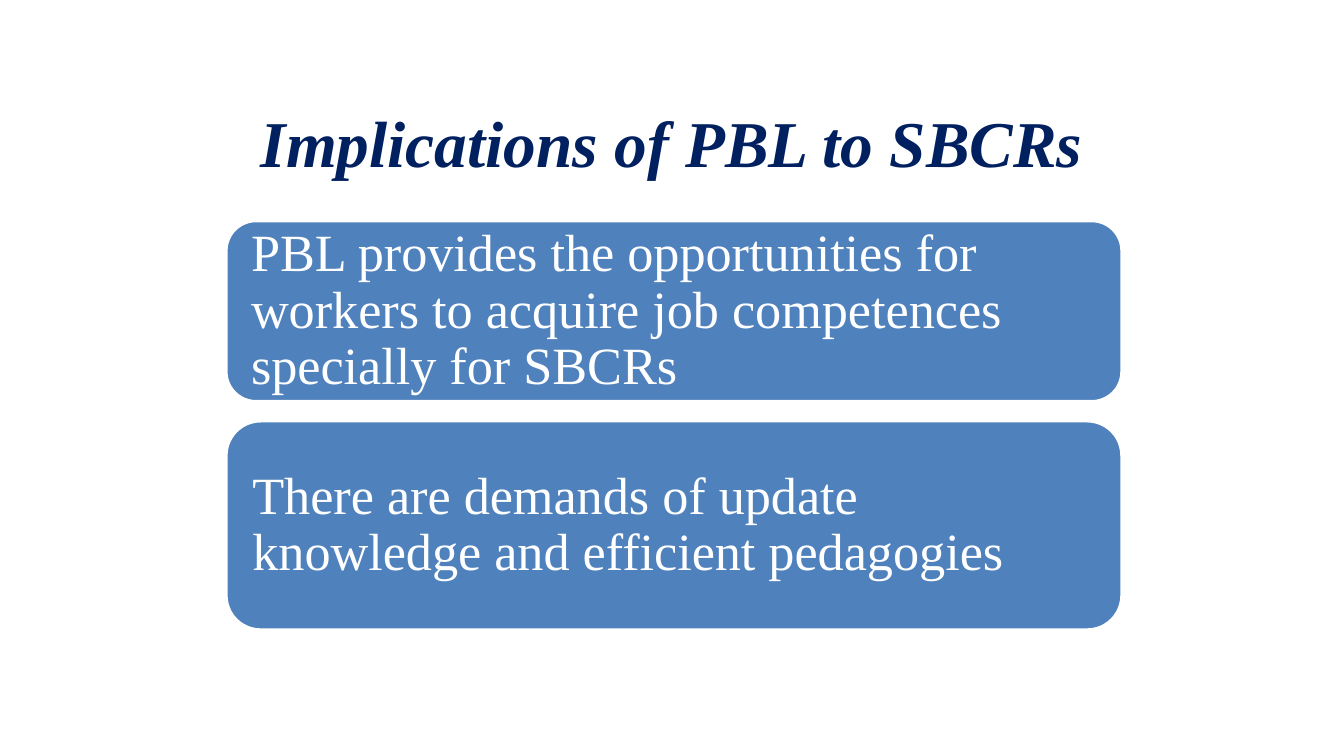
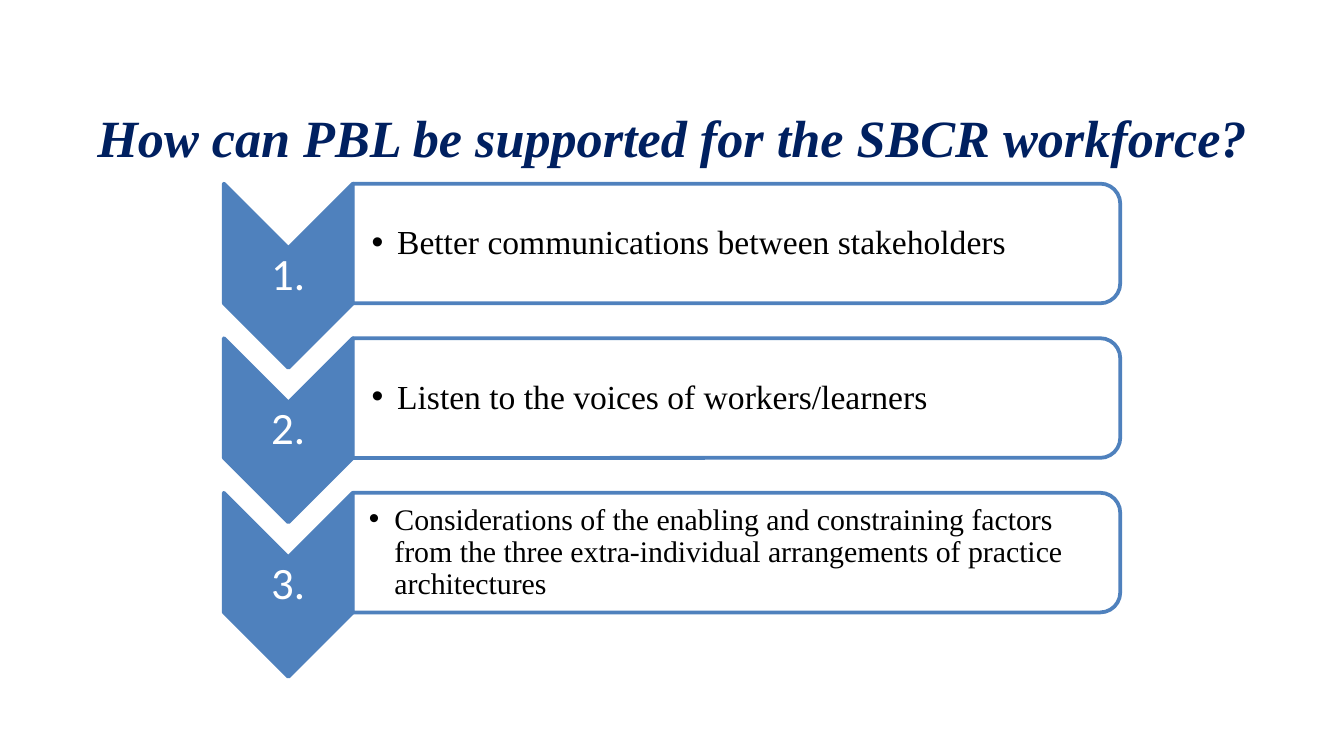
from lxml import etree
from pptx import Presentation, util as u
from pptx.dml.color import RGBColor
from pptx.enum import shapes, text
from pptx.oxml.ns import qn

COLS, ROWS = 100, 56.25
UNIT = u.Inches(10) / COLS
NAVY, BLUE, WHITE, BLACK = "002060", "4F81BD", "FFFFFF", "000000"
SERIF, SANS = "Times New Roman", "Calibri"
KIND = shapes.MSO_SHAPE
LEFT, MID = text.PP_ALIGN.LEFT, text.PP_ALIGN.CENTER


def size(n):
    """Turn grid units into a length."""
    return u.Emu(round(n * UNIT))


def tint(code):
    """Turn a hex string into a colour."""
    return RGBColor.from_string(code)


def draw(slide, kind, box, fill, line, turn=0, alpha=None):
    """Draw a preset shape that covers the box once it is turned."""
    x, y, w, h = box
    if turn:
        x, y, w, h = x + (w - h) / 2, y + (h - w) / 2, h, w
    form = slide.shapes.add_shape(kind, *map(size, (x, y, w, h)))
    form.rotation = turn
    form.shadow.inherit = False
    form.fill.solid()
    form.fill.fore_color.rgb = tint(fill)
    form.line.color.rgb = tint(line)
    form.line.width = u.Pt(2)
    if alpha:
        dye = form.fill._xPr.find(qn("a:solidFill"))[0]
        etree.SubElement(dye, qn("a:alpha"), val=str(alpha * 1000))


def write(slide, box, words, pts, face=SERIF, ink=WHITE, align=LEFT,
          pads=(0, 0), lead=0.9, top=False, bold=False, dot=False):
    """Set one paragraph in a box; pads are the left inset and the rest."""
    frame = slide.shapes.add_textbox(*map(size, box)).text_frame
    frame.word_wrap = True
    frame.vertical_anchor = text.MSO_ANCHOR.TOP if top else text.MSO_ANCHOR.MIDDLE
    frame.margin_left = size(pads[0])
    frame.margin_top = frame.margin_right = frame.margin_bottom = size(pads[1])
    para = frame.paragraphs[0]
    para.alignment = align
    para.line_spacing = lead
    if dot:
        props = para._p.get_or_add_pPr()
        props.set("marL", str(size(1.9)))
        props.set("indent", str(-size(1.9)))
        etree.SubElement(props, qn("a:buFont"), typeface="Arial")
        etree.SubElement(props, qn("a:buChar"), char="•")
    run = para.add_run()
    run.text = words
    font = run.font
    font.size, font.name, font.color.rgb = u.Pt(pts), face, tint(ink)
    font.bold = font.italic = bold


def head(slide, words, pts):
    """Set the slide title."""
    write(slide, (5, 8.7, 90, 7.5), words, pts, ink=NAVY, align=MID,
          lead=0.8, top=True, bold=True)


def card(slide, box, words):
    """Draw a filled card with its text inside the rounded corners."""
    x, y, w, h = box
    draw(slide, KIND.ROUNDED_RECTANGLE, box, BLUE, WHITE)
    pad = h * 0.05
    write(slide, (x + pad, y + pad, w - 2 * pad, h - 2 * pad), words, 28,
          pads=(1.2, 1.2))


def step(slide, box, label, words, pts, inset):
    """Draw a numbered chevron and the panel beside it."""
    x, y, w, h = box
    arm = 9.6
    draw(slide, KIND.CHEVRON, (x, y, arm, h), BLUE, BLUE, turn=90)
    write(slide, (x, y + arm / 2, arm, h - arm), label, 24, SANS,
          align=MID, pads=(0.2, 0.2))
    side, deep = w - arm, h * 0.65
    draw(slide, KIND.ROUND_2_SAME_RECTANGLE, (x + arm, y, side, deep),
         WHITE, BLUE, turn=90, alpha=90)
    write(slide, (x + arm, y + 0.45, side - 0.4, deep - 0.9), words, pts,
          ink=BLACK, pads=(inset, 0.1), dot=True)


def gains(slide):
    """Build the slide of implications."""
    head(slide, "Implications of PBL to SBCRs", 35)
    card(slide, (16.8, 16.4, 66.7, 13.5),
         "PBL provides the opportunities for workers to acquire job "
         "competences specially for SBCRs")
    card(slide, (16.8, 31.3, 66.7, 15.6),
         "There are demands of update knowledge and efficient pedagogies")


def means(slide):
    """Build the slide of numbered supports."""
    head(slide, "How can PBL be supported for the SBCR workforce?", 28)
    items = [
        ("Better communications between stakeholders", 18, 1.4),
        ("Listen to the voices of workers/learners", 18, 1.4),
        ("Considerations of the enabling and constraining factors from the "
         "three extra-individual arrangements of practice architectures",
         16, 1.2),
    ]
    for n, item in enumerate(items):
        step(slide, (16.65, 13.67 + n * 11.5, 66.7, 13.7), f"{n + 1}.", *item)


def main():
    """Build and save the deck."""
    deck = Presentation()
    deck.slide_width, deck.slide_height = size(COLS), size(ROWS)
    for build in (gains, means):
        build(deck.slides.add_slide(deck.slide_layouts[6]))
    deck.save("out.pptx")


if __name__ == "__main__":
    main()
